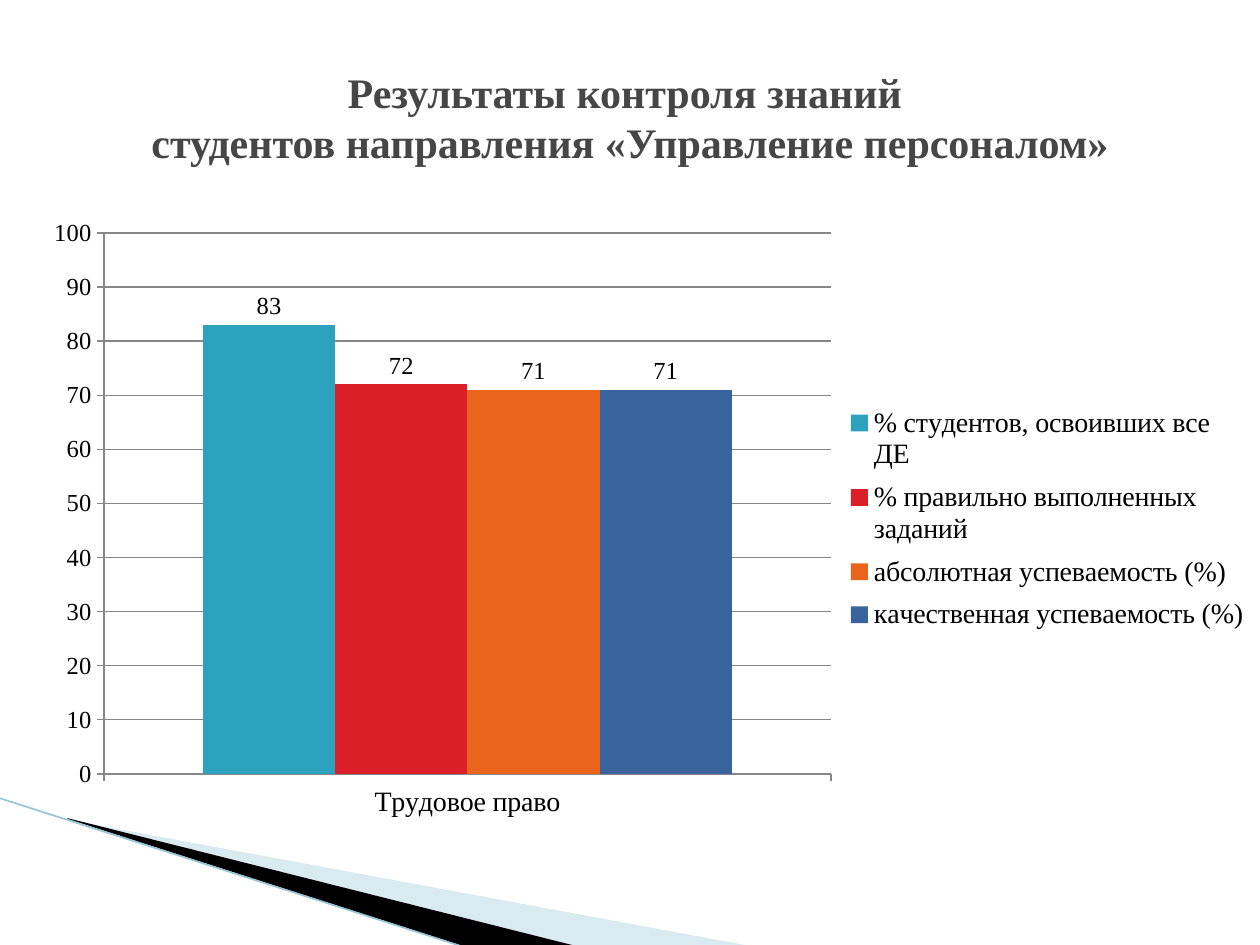
from lxml import etree
from pptx import Presentation
from pptx.chart.data import CategoryChartData
from pptx.dml.color import RGBColor
from pptx.enum.chart import XL_CHART_TYPE, XL_LABEL_POSITION, XL_LEGEND_POSITION, XL_TICK_MARK
from pptx.enum.shapes import MSO_CONNECTOR
from pptx.enum.text import MSO_ANCHOR, PP_ALIGN
from pptx.oxml.ns import qn
from pptx.util import Pt

COLUMNS = XL_CHART_TYPE.COLUMN_CLUSTERED
ABOVE_BAR = XL_LABEL_POSITION.OUTSIDE_END
RIGHT = XL_LEGEND_POSITION.RIGHT
OUTSIDE = XL_TICK_MARK.OUTSIDE
STRAIGHT = MSO_CONNECTOR.STRAIGHT
MIDDLE = MSO_ANCHOR.MIDDLE
CENTER = PP_ALIGN.CENTER

BLACK = RGBColor(0x00, 0x00, 0x00)
TITLE_GRAY = RGBColor(0x46, 0x46, 0x46)
AXIS_GRAY = RGBColor(0x86, 0x86, 0x86)
PALE_BLUE = RGBColor(0xA0, 0xCB, 0xDC)
EDGE_BLUE = RGBColor(0x97, 0xC5, 0xD8)
TEAL = RGBColor(0x2D, 0xA2, 0xBF)
RED = RGBColor(0xDA, 0x1F, 0x28)
ORANGE = RGBColor(0xEB, 0x64, 0x1B)
BLUE = RGBColor(0x39, 0x63, 0x9D)

FONT = "Times New Roman"
TITLE = ("Результаты контроля знаний ", "студентов направления «Управление персоналом»")
SUBJECT = "Трудовое право"
SERIES = [
    ("% студентов, освоивших все ДЕ", 83, TEAL),
    ("% правильно выполненных заданий", 72, RED),
    ("абсолютная успеваемость (%)", 71, ORANGE),
    ("качественная успеваемость (%)", 71, BLUE),
]

SCALE = 914400 / 126
TITLE_AREA = (63, 38, 1134, 158)
CHART_AREA = (29, 207, 1231, 624)
PLOT_AREA = (104, 233, 727, 541)
LEGEND_AREA = (861, 396, 399, 246)
WEDGES = [
    ([(69, 820), (750, 946), (575, 946), (69, 819)], PALE_BLUE, 40),
    ([(67, 818), (576, 946), (469, 948), (68, 819)], BLACK, 100),
]
EDGE = (-1, 798, 467, 948)


def px(*lengths):
    return [round(length * SCALE) for length in lengths]


def format_font(font, size, color=BLACK, bold=False):
    font.name = FONT
    font.size = Pt(size)
    font.bold = bold
    font.color.rgb = color


def add_wedge(page, points, color, opacity):
    builder = page.shapes.build_freeform(*points[0], scale=SCALE)
    builder.add_line_segments(points[1:], close=True)
    wedge = builder.convert_to_shape()
    wedge.shadow.inherit = False
    wedge.fill.solid()
    wedge.fill.fore_color.rgb = color
    wedge.line.fill.background()
    if opacity < 100:
        tint = wedge._element.spPr.find(".//" + qn("a:srgbClr"))
        etree.SubElement(tint, qn("a:alpha"), val=str(opacity * 1000))


def add_edge(page):
    edge = page.shapes.add_connector(STRAIGHT, *px(*EDGE))
    edge.line.color.rgb = EDGE_BLUE
    edge.line.width = Pt(0.95)
    etree.SubElement(edge._element.spPr, qn("a:effectLst"))


def place_in_chart(element, area, index, inner=False):
    for old in element.findall(qn("c:layout")):
        element.remove(old)
    layout = etree.Element(qn("c:layout"))
    manual = etree.SubElement(layout, qn("c:manualLayout"))
    left, top, width, height = CHART_AREA
    settings = [("layoutTarget", "inner")] if inner else []
    settings += [("xMode", "edge"), ("yMode", "edge")]
    settings += [
        ("x", (area[0] - left) / width),
        ("y", (area[1] - top) / height),
        ("w", area[2] / width),
        ("h", area[3] / height),
    ]
    for name, value in settings:
        etree.SubElement(manual, qn("c:" + name), val=str(value))
    element.insert(index, layout)


def add_results_chart(page):
    data = CategoryChartData(number_format="General")
    data.categories = [SUBJECT]
    for name, value, _ in SERIES:
        data.add_series(name, [value])
    chart = page.shapes.add_chart(COLUMNS, *px(*CHART_AREA), data).chart
    chart.has_title = False
    format_font(chart.font, 14)

    plot = chart.plots[0]
    plot.vary_by_categories = False
    plot.gap_width = 150
    plot.overlap = 0
    for series, (_, _, color) in zip(plot.series, SERIES):
        series.format.fill.solid()
        series.format.fill.fore_color.rgb = color
        labels = series.data_labels
        labels.show_value = True
        labels.position = ABOVE_BAR
        format_font(labels.font, 14)

    values, categories = chart.value_axis, chart.category_axis
    values.minimum_scale, values.maximum_scale, values.major_unit = 0, 100, 10
    values.has_major_gridlines = True
    values.tick_labels.number_format = "#,##0"
    values.tick_labels.number_format_is_linked = False
    values.major_gridlines.format.line.color.rgb = AXIS_GRAY
    for axis, size in ((values, 14), (categories, 16)):
        axis.major_tick_mark = OUTSIDE
        axis.format.line.color.rgb = AXIS_GRAY
        format_font(axis.tick_labels.font, size)

    chart.has_legend = True
    chart.legend.position = RIGHT
    chart.legend.include_in_layout = False
    format_font(chart.legend.font, 16)
    plot_area = chart._chartSpace.find(".//" + qn("c:plotArea"))
    place_in_chart(plot_area, PLOT_AREA, 0, inner=True)
    place_in_chart(chart.legend._element, LEGEND_AREA, 1)


def set_title(page):
    title = page.shapes.title
    title.left, title.top, title.width, title.height = px(*TITLE_AREA)
    title.text_frame.vertical_anchor = MIDDLE
    title.text_frame.word_wrap = True
    para = title.text_frame.paragraphs[0]
    para.alignment = CENTER
    para.text = "\v".join(TITLE)
    for span in para.runs:
        format_font(span.font, 24, TITLE_GRAY, bold=True)


def main():
    deck = Presentation()
    deck.slide_width, deck.slide_height = px(1260, 945)
    page = deck.slides.add_slide(deck.slide_layouts[5])
    for points, color, opacity in WEDGES:
        add_wedge(page, points, color, opacity)
    add_edge(page)
    add_results_chart(page)
    set_title(page)
    deck.save("out.pptx")


if __name__ == "__main__":
    main()
